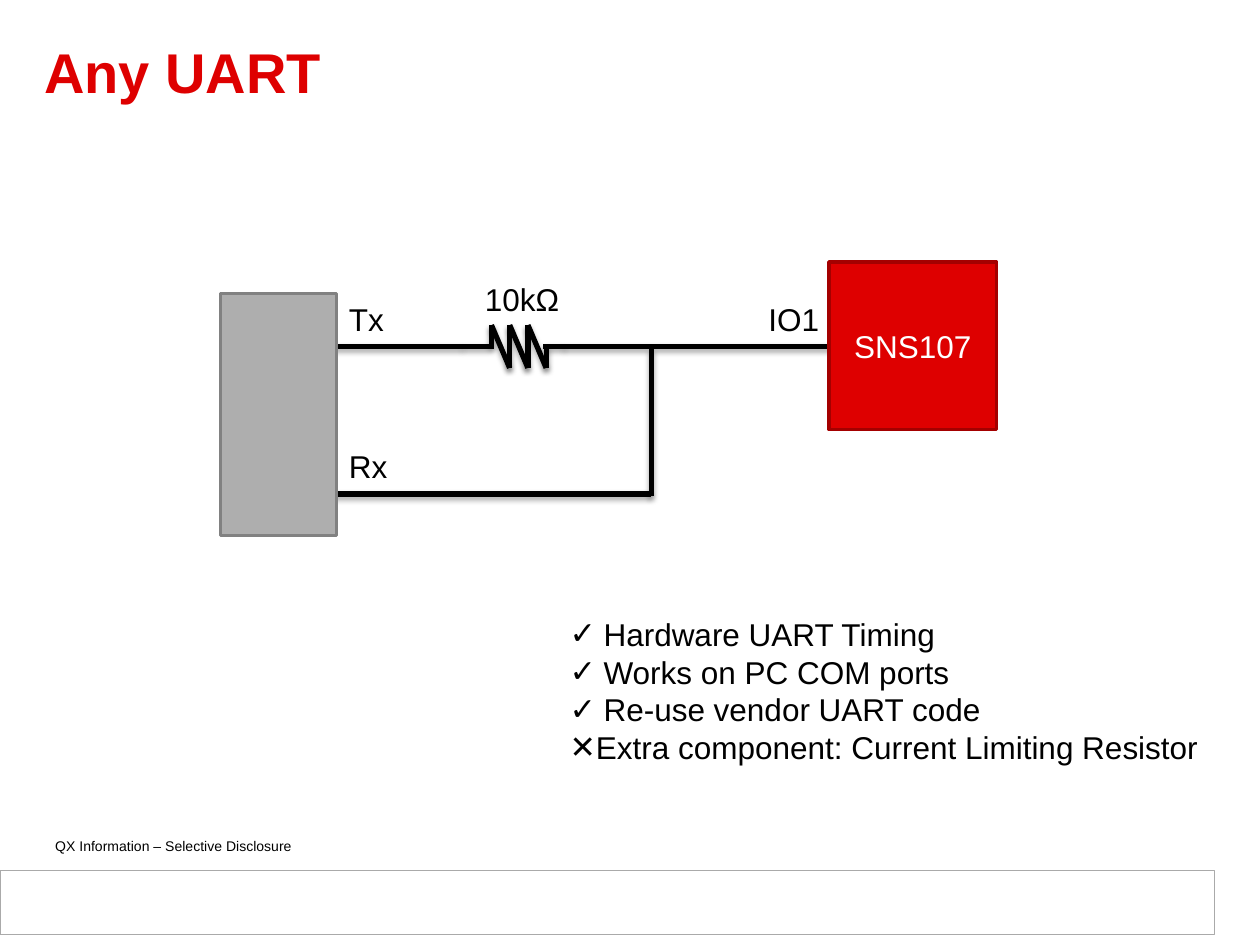
from lxml import etree
from pptx import Presentation
from pptx.dml.color import RGBColor
from pptx.enum.shapes import MSO_CONNECTOR, MSO_SHAPE
from pptx.enum.text import MSO_ANCHOR, MSO_AUTO_SIZE, PP_ALIGN
from pptx.oxml.ns import qn
from pptx.util import Inches, Pt

LINE = MSO_CONNECTOR.STRAIGHT
RECT = MSO_SHAPE.RECTANGLE
LEFT, CENTER = PP_ALIGN.LEFT, PP_ALIGN.CENTER
TOP, MIDDLE = MSO_ANCHOR.TOP, MSO_ANCHOR.MIDDLE
FIXED = MSO_AUTO_SIZE.NONE


class Theme:
    font = "Arial"
    red = RGBColor(0xDE, 0x00, 0x00)
    maroon = RGBColor(0xA4, 0x00, 0x00)
    gray = RGBColor(0xAE, 0xAE, 0xAE)
    steel = RGBColor(0x81, 0x81, 0x81)
    edge = RGBColor(0xAA, 0xAA, 0xAA)
    black = RGBColor(0, 0, 0)
    white = RGBColor(0xFF, 0xFF, 0xFF)
    head, body, note = Pt(32), Pt(18), Pt(8)
    wire, frame, rule = Pt(3), Pt(2), Pt(0.75)


def write(frame, text, size=Theme.body, color=Theme.black, bold=False,
          align=LEFT, anchor=TOP, wrap=True, lead=1.0, marks=()):
    frame.auto_size = FIXED
    frame.word_wrap = wrap
    frame.vertical_anchor = anchor
    frame.text = text
    for i, para in enumerate(frame.paragraphs):
        para.alignment = align
        para.line_spacing = lead
        para.space_before = Pt(0)
        if marks:
            mark, indent = marks[i]
            props = para._p.get_or_add_pPr()
            props.set("marL", str(Inches(indent)))
            props.set("indent", str(-Inches(indent)))
            etree.SubElement(props, qn("a:buFont")).set("typeface", Theme.font)
            etree.SubElement(props, qn("a:buChar")).set("char", mark)
        font = para.font
        font.name, font.size, font.bold = Theme.font, size, bold
        font.color.rgb = color


def wire(shapes, x1, y1, x2, y2):
    line = shapes.add_connector(LINE, Inches(x1), Inches(y1), Inches(x2), Inches(y2))
    line.line.color.rgb = Theme.black
    line.line.width = Theme.wire
    effects = etree.SubElement(line._element.spPr, qn("a:effectLst"))
    shadow = etree.SubElement(effects, qn("a:outerShdw"), blurRad=str(Pt(3.1)),
                              dist=str(Pt(1.8)), dir="5400000", rotWithShape="0")
    color = etree.SubElement(shadow, qn("a:srgbClr"), val=str(Theme.black))
    etree.SubElement(color, qn("a:alpha"), val="35000")


deck = Presentation()
deck.slide_width, deck.slide_height = Inches(10), Inches(7.5)
slide = deck.slides.add_slide(deck.slide_layouts[1])
shapes = slide.shapes
title, body = shapes.title, slide.placeholders[1]

title.left, title.top = Inches(0.25), Inches(0.16)
title.width, title.height = Inches(9.25), Inches(0.89)
write(title.text_frame, "Any UART", size=Theme.head, color=Theme.red,
      bold=True, anchor=MIDDLE, lead=0.85)

body.left, body.top = Inches(4.42), Inches(4.83)
body.width, body.height = Inches(5.58), Inches(1.31)
points = ["Hardware UART Timing", "Works on PC COM ports", "Re-use vendor UART code",
          "Extra component: Current Limiting Resistor"]
write(body.text_frame, "\n".join(points), marks=[("✓", 0.27)] * 3 + [("✕", 0.2)])

high, low, node = 2.75, 3.92, 5.17
for ends in [(2.25, high, 3.67, high), (2.58, low, node, low),
             (4.47, high, 6.89, high), (node, 2.77, node, 3.94)]:
    wire(shapes, *ends)

boxes = [(0, 6.91, 9.64, 0.51, Theme.white, Theme.edge, Theme.rule, ""),
         (1.75, 2.33, 0.92, 1.92, Theme.gray, Theme.steel, Theme.frame, ""),
         (6.58, 2.08, 1.33, 1.33, Theme.red, Theme.maroon, Theme.frame, "SNS107")]
for x, y, w, h, fill, edge, width, text in boxes:
    box = shapes.add_shape(RECT, Inches(x), Inches(y), Inches(w), Inches(h))
    box.shadow.inherit = False
    box.fill.solid()
    box.fill.fore_color.rgb = fill
    box.line.color.rgb = edge
    box.line.width = width
    if text:
        write(box.text_frame, text, color=Theme.white, align=CENTER, anchor=MIDDLE)

coil = shapes.add_group_shape().shapes
start, step, peak, base = 3.9, 0.145, 2.58, 2.92
end = start + 3 * step
wire(coil, 3.67, high, 3.92, high)
wire(coil, start, peak, start, high)
for i in range(3):
    x = start + i * step
    wire(coil, x, peak, x + step, base)
    if i:
        wire(coil, x, base, x, peak)
wire(coil, end, base, end, high)
wire(coil, 4.31, high, 4.48, high)

labels = [("Tx", 2.67, 2.33, 0.48, 0.4, Theme.body),
          ("Rx", 2.67, 3.5, 0.51, 0.4, Theme.body),
          ("IO1", 6, 2.33, 0.61, 0.4, Theme.body),
          ("10kΩ", 3.75, 2.17, 0.8, 0.4, Theme.body),
          ("QX Information – Selective Disclosure", 0.34, 6.6, 2.77, 0.24, Theme.note)]
for text, x, y, w, h, size in labels:
    label = shapes.add_textbox(Inches(x), Inches(y), Inches(w), Inches(h))
    write(label.text_frame, text, size=size, wrap=False)

deck.save("out.pptx")
